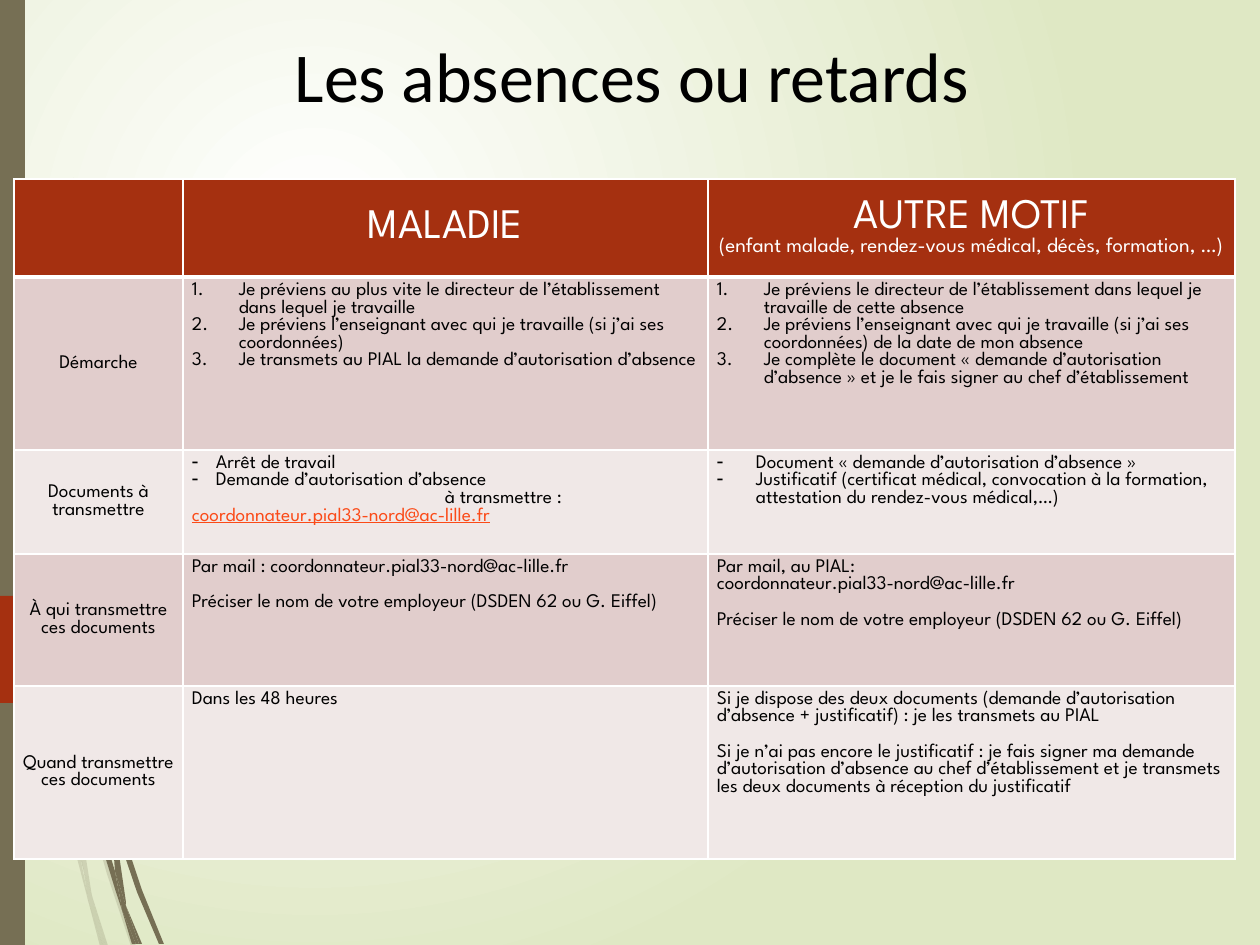
from lxml import etree
from pptx import Presentation
from pptx.dml.color import RGBColor
from pptx.enum.shapes import MSO_SHAPE as Shape
from pptx.enum.text import MSO_ANCHOR as Anchor, PP_ALIGN as Align
from pptx.oxml.ns import qn
from pptx.util import Pt

PX = 9144000 // 1260
OLIVE, RUST, BLACK, WHITE = "766F54", "A53010", "000000", "FFFFFF"
BODY_FONT = "League Spartan"
BODY_SIZE, LINE = 11, 10
MAIL = "coordonnateur.pial33-nord@ac-lille.fr"
EMPLOYER = "Préciser le nom de votre employeur (DSDEN 62 ou G. Eiffel)"

PALE_WISPS = [
    [(81, 765), (77, 751), (77, 769), (107, 874), (131, 946), (136, 946), (111, 872)],
    [(105, 946), (108, 946), (92, 896)],
    [(81, 861), (60, 780), (28, 591), (15, 474), (10, 441), (24, 592), (57, 782),
     (81, 873), (88, 900), (87, 891)],
    [(73, 755), (76, 814), (81, 861), (84, 872), (92, 896), (91, 890), (79, 814),
     (77, 769), (77, 766)],
    [(88, 900), (100, 946), (103, 946)],
    [(84, 872), (82, 861), (87, 891), (88, 900), (103, 946), (105, 946), (92, 896)],
]
DARK_WISPS = [
    [(118, 818), (115, 808), (115, 827), (137, 892), (159, 944), (164, 944), (142, 890)],
    [(115, 871), (102, 828), (76, 701), (67, 636), (59, 601), (71, 702), (97, 830),
     (116, 892), (122, 910), (121, 903)],
    [(63, 595), (60, 571), (55, 440), (60, 309), (66, 243), (73, 178), (64, 243),
     (59, 309), (54, 440), (57, 566), (62, 595)],
    [(139, 944), (142, 944), (126, 906)],
    [(122, 910), (132, 944), (136, 944)],
    [(111, 813), (115, 871), (121, 890), (126, 906), (126, 902), (115, 827), (113, 820)],
    [(121, 890), (115, 871), (121, 903), (122, 910), (136, 944), (139, 944), (126, 906)],
]


def line(text, **style):
    return dict(text=text, **style)


def numbered(*texts):
    return [line(text, indent=47, number=True) for text in texts]


def dashed(indent, *texts):
    return [line(text, indent=indent, dash=True) for text in texts]


def label(text):
    return [line(text, align=Align.CENTER)]


def heading(text, size=24):
    return line(text, align=Align.CENTER, size=size, color=WHITE)


ROWS = [
    [[], [heading("MALADIE")],
     [heading("AUTRE MOTIF"),
      heading("(enfant malade, rendez-vous médical, décès, formation, …)", 12)]],
    [label("Démarche"),
     numbered("Je préviens au plus vite le directeur de l’établissement dans lequel je travaille",
              "Je préviens l’enseignant avec qui je travaille (si j’ai ses coordonnées)",
              "Je transmets au PIAL la demande d’autorisation d’absence"),
     numbered("Je préviens le directeur de l’établissement dans lequel je travaille de cette absence",
              "Je préviens l’enseignant avec qui je travaille (si j’ai ses coordonnées) "
              "de la date de mon absence",
              "Je complète le document « demande d’autorisation d’absence » "
              "et je le fais signer au chef d’établissement")],
    [label("Documents à transmettre"),
     dashed(24, "Arrêt de travail", "Demande d’autorisation d’absence")
     + [line("à transmettre :", indent=253),
        line(MAIL, color="FB4A18", underline=True)],
     dashed(39, "Document « demande d’autorisation d’absence »",
            "Justificatif (certificat médical, convocation à la formation, "
            "attestation du rendez-vous médical,…)")],
    [label("À qui transmettre ces documents"),
     [line("Par mail : " + MAIL), line(EMPLOYER, before=LINE)],
     [line("Par mail, au PIAL:"), line(MAIL), line(EMPLOYER, before=LINE)]],
    [label("Quand transmettre ces documents"),
     [line("Dans les 48 heures")],
     [line("Si je dispose des deux documents (demande d’autorisation d’absence + justificatif) : "
           "je les transmets au PIAL"),
      line("Si je n’ai pas encore le justificatif : je fais signer ma demande d’autorisation "
           "d’absence au chef d’établissement et je transmets les deux documents à réception "
           "du justificatif", before=LINE)]],
]


def rgb(value):
    return RGBColor.from_string(value)


def paint(shape, color, alpha=None):
    shape.shadow.inherit = False
    shape.fill.solid()
    shape.fill.fore_color.rgb = rgb(color)
    shape.line.fill.background()
    if alpha:
        solid = shape.fill._xPr.find(qn("a:solidFill"))
        etree.SubElement(solid[0], qn("a:alpha"), val=str(alpha * 1000))


def add_background(slide):
    fill = slide.background.fill
    fill.gradient()
    for stop, color, position in zip(fill.gradient_stops, (WHITE, "DFE8C4"), (0, 1)):
        stop.color.rgb = rgb(color)
        stop.position = position
    gradient = fill._xPr.find(qn("a:gradFill"))
    linear = gradient.find(qn("a:lin"))
    circle = etree.Element(qn("a:path"), path="circle")
    etree.SubElement(circle, qn("a:fillToRect"), l="50000", t="50000", r="100000", b="100000")
    gradient.replace(linear, circle)


def add_wisps(slide, outlines, alpha=None):
    for start, *rest in outlines:
        builder = slide.shapes.build_freeform(*start, scale=PX)
        builder.add_line_segments(rest, close=True)
        paint(builder.convert_to_shape(), OLIVE, alpha)


def add_side_band(slide, left, top, width, height):
    band = slide.shapes.add_shape(Shape.RECTANGLE, left * PX, top * PX, width * PX, height * PX)
    paint(band, OLIVE)
    arrow = slide.shapes.add_shape(Shape.PENTAGON, (left - 4) * PX, (top + 596) * PX,
                                   193 * PX, 107 * PX)
    paint(arrow, RUST)


def write_run(paragraph, text, font, size, color, underline=None):
    run = paragraph.add_run()
    run.text = text
    run.font.name = font
    run.font.size = Pt(size)
    run.font.color.rgb = rgb(color)
    run.font.underline = underline


def add_title(slide, left, top, width, height):
    frame = slide.shapes.add_textbox(left * PX, top * PX, width * PX, height * PX).text_frame
    frame.word_wrap = True
    paragraph = frame.paragraphs[0]
    paragraph.alignment = Align.CENTER
    write_run(paragraph, "Les absences ou retards", "Calibri", 40, BLACK)


def write_line(paragraph, text, align=Align.LEFT, size=BODY_SIZE, color=BLACK, underline=None,
               before=0, indent=0, number=False, dash=False):
    paragraph.alignment = align
    paragraph.space_before = Pt(before)
    properties = paragraph._p.get_or_add_pPr()
    properties.set("marL", str(indent * PX))
    if number or dash:
        properties.set("indent", str(-indent * PX))
    if number:
        etree.SubElement(properties, qn("a:buAutoNum"), type="arabicPeriod")
    if dash:
        etree.SubElement(properties, qn("a:buChar"), char="-")
    write_run(paragraph, text, BODY_FONT, size, color, underline)


def add_borders(cell, bottom):
    properties = cell._tc.get_or_add_tcPr()
    for side, points in (("L", 1), ("R", 1), ("T", 1), ("B", bottom)):
        border = etree.SubElement(properties, qn("a:ln" + side), w=str(Pt(points)))
        solid = etree.SubElement(border, qn("a:solidFill"))
        etree.SubElement(solid, qn("a:srgbClr"), val=WHITE)


def fill_cell(cell, lines, color, centred, bottom):
    cell.margin_left = cell.margin_right = 9 * PX
    cell.margin_top = cell.margin_bottom = 5 * PX
    cell.vertical_anchor = Anchor.MIDDLE if centred else Anchor.TOP
    add_borders(cell, bottom)
    cell.fill.solid()
    cell.fill.fore_color.rgb = rgb(color)
    for index, content in enumerate(lines):
        frame = cell.text_frame
        paragraph = frame.add_paragraph() if index else frame.paragraphs[0]
        write_line(paragraph, **content)


def add_absence_table(slide, left, top, widths, heights):
    table = slide.shapes.add_table(len(heights), len(widths), left * PX, top * PX,
                                   sum(widths) * PX, sum(heights) * PX).table
    for column, width in zip(table.columns, widths):
        column.width = width * PX
    for row, height in zip(table.rows, heights):
        row.height = height * PX
    for r, row in enumerate(ROWS):
        color = RUST if r == 0 else ("F0E8E7", "E1CDCC")[r % 2]
        for c, lines in enumerate(row):
            fill_cell(table.cell(r, c), lines, color, r == 0 or c == 0, 1 if r else 3)


def main():
    presentation = Presentation()
    presentation.slide_width, presentation.slide_height = 1260 * PX, 945 * PX
    slide = presentation.slides.add_slide(presentation.slide_layouts[6])
    add_background(slide)
    add_wisps(slide, PALE_WISPS, alpha=20)
    add_wisps(slide, DARK_WISPS)
    add_side_band(slide, 0, 0, 25, 945)
    add_title(slide, 2, 26, 1260, 97)
    add_absence_table(slide, 14, 179, [169, 525, 527], [98, 173, 104, 132, 173])
    presentation.save("out.pptx")


if __name__ == "__main__":
    main()
